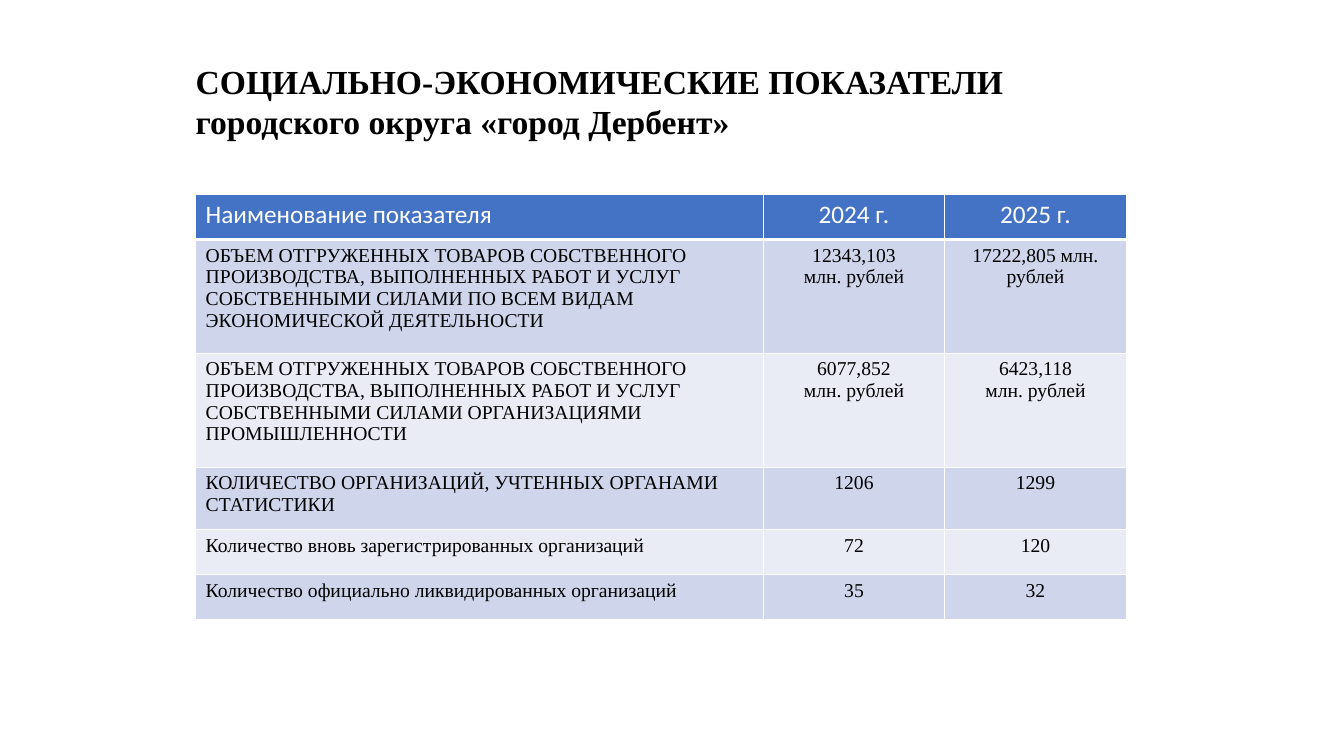
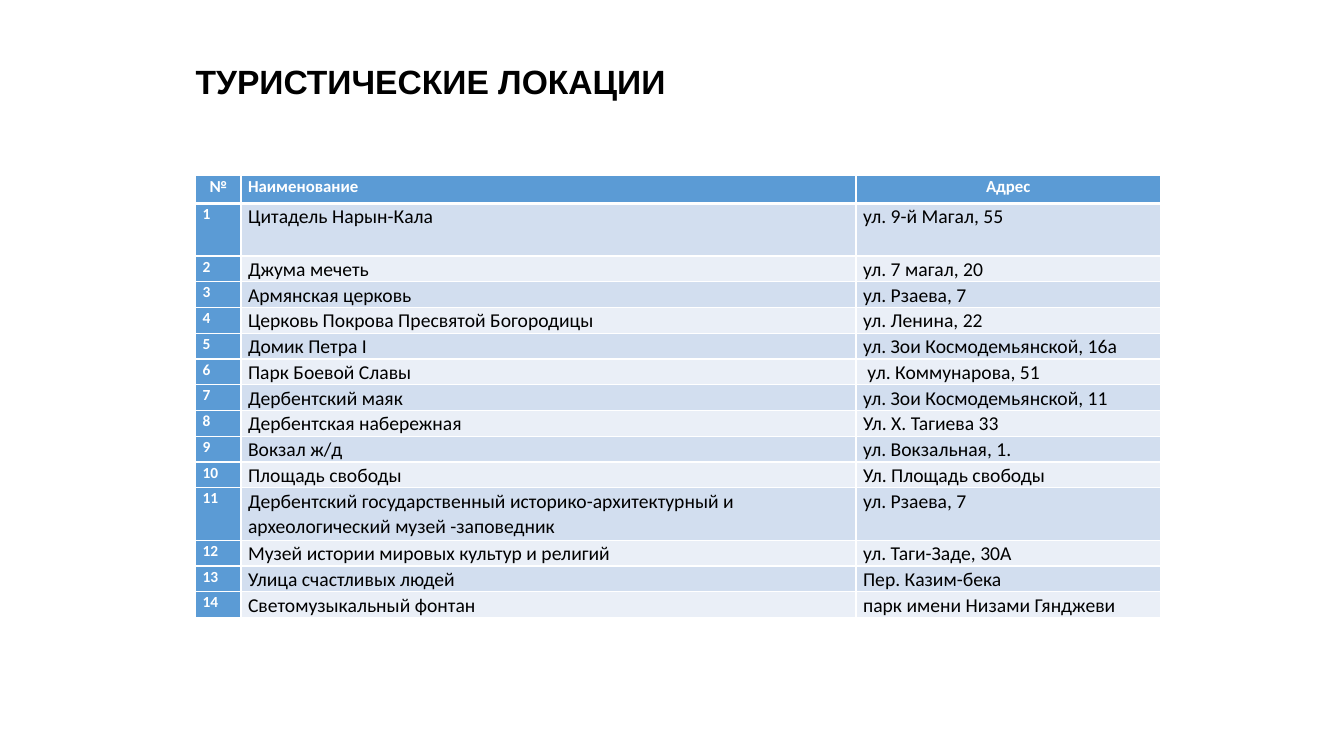
"""Build two table slides about the city of Derbent."""
import lxml.etree
import pptx
import pptx.dml.color
import pptx.enum.text
import pptx.oxml.ns
import pptx.util

Inches, Pt = pptx.util.Inches, pptx.util.Pt
LEFT, CENTER = pptx.enum.text.PP_ALIGN.LEFT, pptx.enum.text.PP_ALIGN.CENTER

COLORS = {
    "text": "000000", "light": "FFFFFF",
    "indigo": "4472C4", "indigo_odd": "CFD5EA", "indigo_even": "E9EBF5",
    "blue": "5B9BD5", "blue_odd": "D2DEEF", "blue_even": "EAEFF7",
}
MARGIN, TITLE_TOP, TITLE_LINE = 1.94, 0.6, 0.4

INDICATORS = [
    ("Наименование показателя", "2024 г.", "2025 г."),
    ("ОБЪЕМ ОТГРУЖЕННЫХ ТОВАРОВ СОБСТВЕННОГО ПРОИЗВОДСТВА, ВЫПОЛНЕННЫХ РАБОТ И УСЛУГ "
     "СОБСТВЕННЫМИ СИЛАМИ ПО ВСЕМ ВИДАМ ЭКОНОМИЧЕСКОЙ ДЕЯТЕЛЬНОСТИ",
     "12343,103\nмлн. рублей", "17222,805 млн. рублей"),
    ("ОБЪЕМ ОТГРУЖЕННЫХ ТОВАРОВ СОБСТВЕННОГО ПРОИЗВОДСТВА, ВЫПОЛНЕННЫХ РАБОТ И УСЛУГ "
     "СОБСТВЕННЫМИ СИЛАМИ ОРГАНИЗАЦИЯМИ ПРОМЫШЛЕННОСТИ",
     "6077,852\nмлн. рублей", "6423,118\nмлн. рублей"),
    ("КОЛИЧЕСТВО ОРГАНИЗАЦИЙ, УЧТЕННЫХ ОРГАНАМИ СТАТИСТИКИ", "1206", "1299"),
    ("Количество вновь зарегистрированных организаций", "72", "120"),
    ("Количество официально ликвидированных организаций", "35", "32"),
]
PLACES = [
    ("Цитадель Нарын-Кала", "ул. 9-й Магал, 55"),
    ("Джума мечеть", "ул. 7 магал, 20"),
    ("Армянская церковь", "ул. Рзаева, 7"),
    ("Церковь Покрова Пресвятой Богородицы", "ул. Ленина, 22"),
    ("Домик Петра I", "ул. Зои Космодемьянской, 16а"),
    ("Парк Боевой Славы", " ул. Коммунарова, 51"),
    ("Дербентский маяк", "ул. Зои Космодемьянской, 11"),
    ("Дербентская набережная", "Ул. Х. Тагиева 33"),
    ("Вокзал ж/д", "ул. Вокзальная, 1."),
    ("Площадь свободы", "Ул. Площадь свободы"),
    ("Дербентский государственный историко-архитектурный и археологический музей -заповедник",
     "ул. Рзаева, 7"),
    ("Музей истории мировых культур и религий", "ул. Таги-Заде, 30А"),
    ("Улица счастливых людей", "Пер. Казим-бека"),
    ("Светомузыкальный фонтан", "парк имени Низами Гянджеви"),
]
NUMBERED_PLACES = [("№", "Наименование", "Адрес")] + [
    (str(number), *place) for number, place in enumerate(PLACES, 1)]

SLIDES = [
    {"title": ["СОЦИАЛЬНО-ЭКОНОМИЧЕСКИЕ ПОКАЗАТЕЛИ", "городского округа «город Дербент»"],
     "title_font": "Times New Roman", "title_width": 9.65,
     "rows": INDICATORS, "top": 1.93, "height": 4.22, "columns": [5.63, 1.8, 1.8],
     "fixed_rows": {1: 1.13, 2: 1.13, 3: 0.62}, "palette": "indigo",
     "head_align": [LEFT, CENTER, CENTER], "body_align": [LEFT, CENTER, CENTER],
     "head_style": ("Calibri", 18, "light", False),
     "body_style": ("Times New Roman", 14, "text", False),
     "insets": (0.1, 0.05), "spacing": 1.0},
    {"title": ["ТУРИСТИЧЕСКИЕ ЛОКАЦИИ"],
     "title_font": "Arial", "title_width": 8,
     "rows": NUMBERED_PLACES, "top": 1.74, "height": 4.39, "columns": [0.45, 6.1, 3.02],
     "fixed_rows": {0: 0.28, 1: 0.52, 11: 0.52}, "palette": "blue",
     "head_align": [CENTER, LEFT, CENTER], "body_align": [LEFT, LEFT, LEFT],
     "head_style": ("Calibri", 12, "light", True),
     "body_style": ("Calibri", 14, "text", False),
     "number_style": ("Calibri", 11, "light", True),
     "insets": (0.07, 0), "spacing": 1.07},
]


def write(paragraph, text, style, align, spacing):
    font_name, size, color, bold = style
    paragraph.alignment = align
    paragraph.line_spacing = spacing
    for index, line in enumerate(text.split("\n")):
        if index:
            paragraph.add_line_break()
        run = paragraph.add_run()
        run.text = line
        run.font.name, run.font.size, run.font.bold = font_name, Pt(size), bold
        run.font.color.rgb = pptx.dml.color.RGBColor.from_string(COLORS[color])


def add_title(slide, content):
    title = slide.shapes.title
    lines = content["title"]
    title.left, title.top = Inches(MARGIN), Inches(TITLE_TOP)
    title.width, title.height = Inches(content["title_width"]), Inches(TITLE_LINE * len(lines))
    frame = title.text_frame
    frame.margin_left = frame.margin_top = frame.margin_right = frame.margin_bottom = 0
    frame.vertical_anchor = pptx.enum.text.MSO_ANCHOR.TOP
    frame.auto_size = pptx.enum.text.MSO_AUTO_SIZE.NONE
    frame.word_wrap = True
    for index, line in enumerate(lines):
        paragraph = frame.add_paragraph() if index else frame.paragraphs[0]
        write(paragraph, line, (content["title_font"], 24, "text", True), LEFT,
              Pt(TITLE_LINE * 72))


def set_borders(cell, bottom):
    properties = cell._tc.get_or_add_tcPr()
    widths = {"a:lnL": 1, "a:lnR": 1, "a:lnT": 1, "a:lnB": bottom}
    for position, (tag, width) in enumerate(widths.items()):
        line = lxml.etree.Element(pptx.oxml.ns.qn(tag), w=str(Pt(width)))
        fill = lxml.etree.SubElement(line, pptx.oxml.ns.qn("a:solidFill"))
        lxml.etree.SubElement(fill, pptx.oxml.ns.qn("a:srgbClr"), val=COLORS["light"])
        properties.insert(position, line)


def fill_cell(cell, content, row, column):
    palette = content["palette"]
    if row == 0:
        style, fill = content["head_style"], palette
    elif column == 0 and "number_style" in content:
        style, fill = content["number_style"], palette
    else:
        style = content["body_style"]
        fill = palette + ("_odd" if row % 2 else "_even")
    cell.fill.solid()
    cell.fill.fore_color.rgb = pptx.dml.color.RGBColor.from_string(COLORS[fill])
    side, vertical = content["insets"]
    cell.margin_left = cell.margin_right = Inches(side)
    cell.margin_top = cell.margin_bottom = Inches(vertical)
    align = content["body_align" if row else "head_align"][column]
    write(cell.text_frame.paragraphs[0], content["rows"][row][column], style, align,
          content["spacing"])
    set_borders(cell, 1 if row else 3)


def add_grid(slide, content):
    rows, columns, fixed = content["rows"], content["columns"], content["fixed_rows"]
    shared = (content["height"] - sum(fixed.values())) / (len(rows) - len(fixed))
    table = slide.shapes.add_table(
        len(rows), len(columns), Inches(MARGIN), Inches(content["top"]),
        Inches(sum(columns)), Inches(content["height"])).table
    for column, width in enumerate(columns):
        table.columns[column].width = Inches(width)
    for row in range(len(rows)):
        table.rows[row].height = Inches(fixed.get(row, shared))
        for column in range(len(columns)):
            fill_cell(table.cell(row, column), content, row, column)


def main():
    deck = pptx.Presentation()
    deck.slide_width, deck.slide_height = Inches(13.33), Inches(7.5)
    for content in SLIDES:
        slide = deck.slides.add_slide(deck.slide_layouts[5])
        add_title(slide, content)
        add_grid(slide, content)
    deck.save("out.pptx")


if __name__ == "__main__":
    main()
